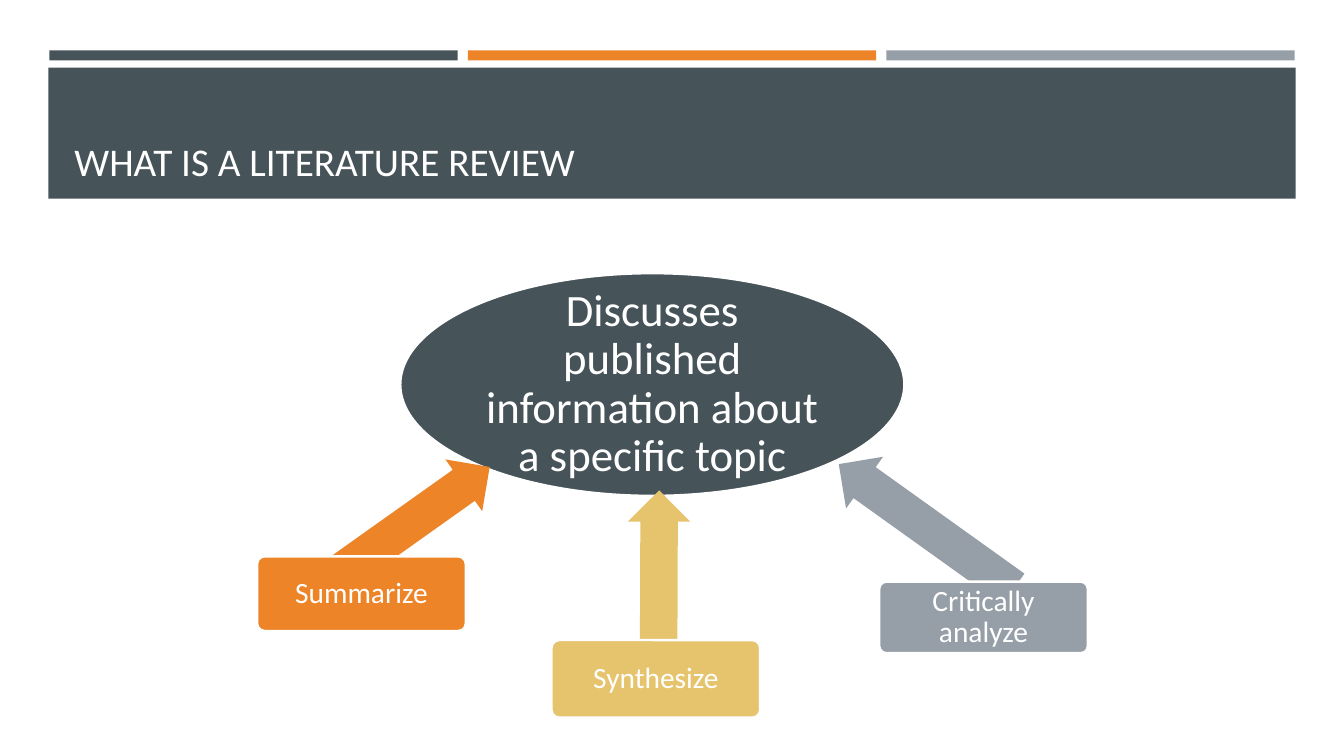
import pptx
import pptx.util
import pptx.dml.color
import pptx.enum.shapes
import pptx.enum.text
from pptx.util import Inches

RGBColor = pptx.dml.color.RGBColor
SHAPES = pptx.enum.shapes.MSO_SHAPE
ALIGN = pptx.enum.text.PP_ALIGN
ANCHOR = pptx.enum.text.MSO_ANCHOR

SLATE = RGBColor(0x46, 0x53, 0x59)
ORANGE = RGBColor(0xED, 0x84, 0x28)
GRAY = RGBColor(0x96, 0x9F, 0xA7)
GOLD = RGBColor(0xE6, 0xC4, 0x6D)
WHITE = RGBColor(0xFF, 0xFF, 0xFF)
FONT = "Calibri"


def add_filled(slide, kind, box, color, adjustments=()):
    """Add a flat shape without outline; box is left, top, width, height."""
    shape = slide.shapes.add_shape(kind, *map(Inches, box))
    shape.shadow.inherit = False
    shape.fill.solid()
    shape.fill.fore_color.rgb = color
    shape.line.fill.background()
    for index, value in enumerate(adjustments):
        shape.adjustments[index] = value
    return shape


def write(shape, text, size, align, anchor):
    frame = shape.text_frame
    frame.word_wrap = True
    frame.vertical_anchor = anchor
    frame.text = text
    paragraph = frame.paragraphs[0]
    paragraph.alignment = align
    font = paragraph.runs[0].font
    font.name = FONT
    font.size = pptx.util.Pt(size)
    font.color.rgb = WHITE


def add_node(slide, kind, box, color, text, size, inset, adjustments=()):
    """Add a white-outlined diagram node with centred text."""
    node = add_filled(slide, kind, box, color, adjustments)
    node.line.color.rgb = WHITE
    node.line.width = pptx.util.Pt(1.75)
    write(node, text, size, ALIGN.CENTER, ANCHOR.MIDDLE)
    frame = node.text_frame
    frame.margin_left = frame.margin_right = Inches(inset)
    frame.margin_top = frame.margin_bottom = Inches(inset)
    frame.paragraphs[0].line_spacing = 0.9


def add_arrow(slide, box, rotation, color):
    arrow = add_filled(slide, SHAPES.LEFT_ARROW, box, color, (0.6, 0.5))
    arrow.rotation = rotation


def add_header(slide, title):
    # Three accent bars at equal steps
    for column, color in enumerate((SLATE, ORANGE, GRAY)):
        add_filled(slide, SHAPES.RECTANGLE,
                   (0.49 + 4.15 * column, 0.5, 4.05, 0.1), color)

    # Title band
    add_filled(slide, SHAPES.RECTANGLE, (0.48, 0.67, 12.37, 1.3), SLATE)
    title_box = slide.shapes.add_textbox(*map(Inches, (0.64, 0.77, 12.06, 1.11)))
    write(title_box, title, 28, ALIGN.LEFT, ANCHOR.BOTTOM)


def main():
    presentation = pptx.Presentation()
    presentation.slide_width = Inches(13.33)
    presentation.slide_height = Inches(7.5)
    slide = presentation.slides.add_slide(presentation.slide_layouts[6])

    add_header(slide, "WHAT IS A LITERATURE REVIEW")

    # Central idea
    add_node(slide, SHAPES.OVAL, (3.97, 2.71, 5, 2.21), SLATE,
             "Discusses published information about a specific topic", 32, 0.02)

    # Activities: text, colour, box, arrow box, arrow rotation
    activities = (
        ("Summarize", ORANGE, (2.55, 5.52, 2.07, 0.74),
         (3.25, 4.83, 1.77, 0.63), 144.6),
        ("Synthesize", GOLD, (5.47, 6.35, 2.07, 0.77),
         (5.7, 5.39, 1.67, 0.62), 90.2),
        ("Critically analyze", GRAY, (8.72, 5.77, 2.07, 0.71),
         (8.12, 4.91, 2.13, 0.63), 35.6),
    )
    for text, color, box, arrow_box, rotation in activities:
        add_arrow(slide, arrow_box, rotation, color)
        add_node(slide, SHAPES.ROUNDED_RECTANGLE, box, color, text, 21, 0.04, (0.1,))

    presentation.save("out.pptx")


if __name__ == "__main__":
    main()
